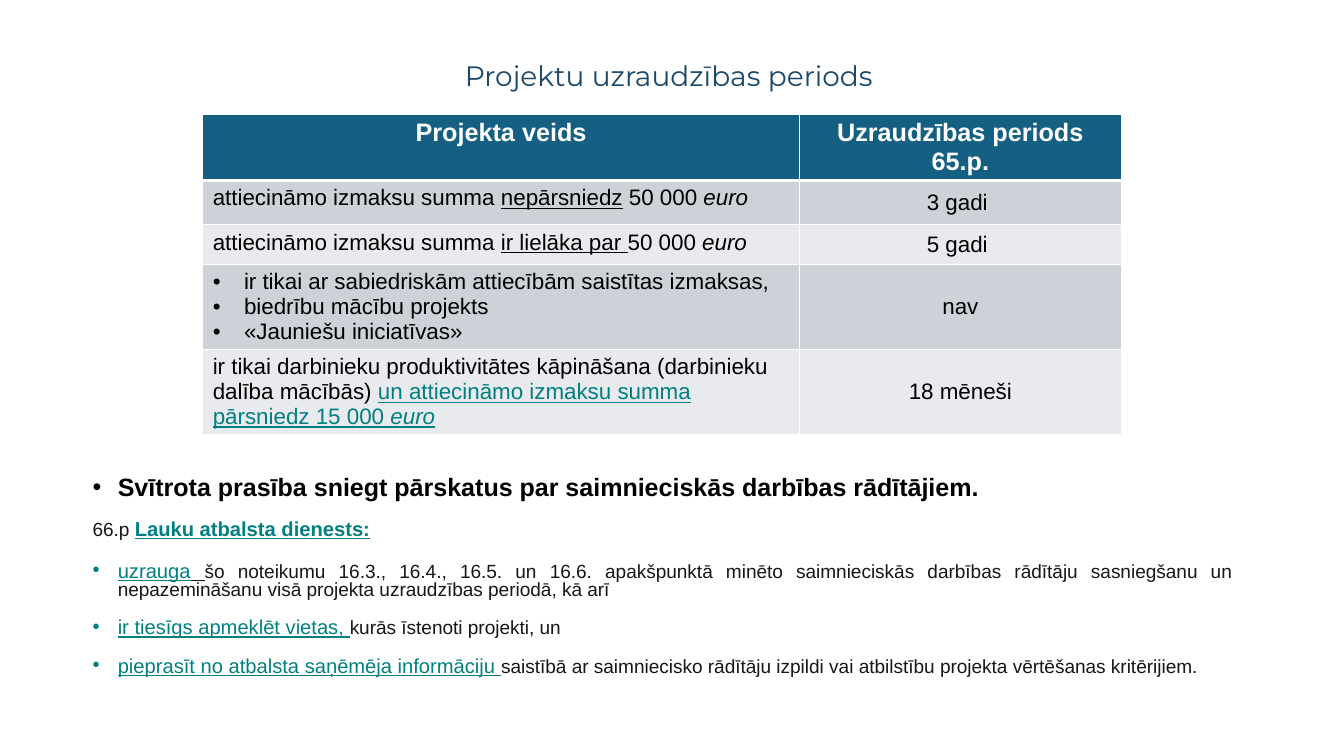
"""Builds a slide on project monitoring periods: a title, a table and notes."""
from dataclasses import dataclass

from lxml import etree
from pptx import Presentation
from pptx.dml.color import RGBColor
from pptx.enum.text import MSO_ANCHOR, PP_ALIGN
from pptx.oxml.ns import qn
from pptx.util import Inches, Pt

LEFT, CENTER, JUSTIFY = PP_ALIGN.LEFT, PP_ALIGN.CENTER, PP_ALIGN.JUSTIFY
TOP, MIDDLE = MSO_ANCHOR.TOP, MSO_ANCHOR.MIDDLE


@dataclass(frozen=True)
class Theme:
    """Colours, fonts and type sizes of the slide."""
    title_font: str = "Montserrat"
    text_font: str = "Arial"
    title: str = "19486A"
    header: str = "156082"
    bands: tuple = ("E8EAED", "CCD2D8")
    white: str = "FFFFFF"
    black: str = "000000"
    ink: str = "171717"
    teal: str = "008080"
    title_size: float = 20
    header_size: float = 18
    cell_size: float = 16
    lead_size: float = 17.9
    wide_size: float = 15.3
    accent_size: float = 14.4
    note_size: float = 13.6


THEME = Theme()
UNDERLINE = {"underline": True}
ITALIC = {"italic": True}
TEAL_LINK = {"underline": True, "color": THEME.teal}
NOTE_LINK = {**TEAL_LINK, "size": THEME.accent_size}


def style_font(font, size=None, color=None, name=None, **flags):
    """Sets the given properties of a font."""
    if size:
        font.size = Pt(size)
    if color:
        font.color.rgb = RGBColor.from_string(color)
    if name:
        font.name = name
    for flag, value in flags.items():
        setattr(font, flag, value)


def write_paragraph(paragraph, runs, alignment, bullet_indent=0, **font):
    """Writes styled runs, with a hanging bullet if an indent in inches is given."""
    paragraph.alignment = alignment
    style_font(paragraph.font, **font)
    if bullet_indent:
        properties = paragraph._p.get_or_add_pPr()
        properties.set("marL", str(Inches(bullet_indent)))
        properties.set("indent", str(-Inches(bullet_indent)))
        bullet_font = etree.Element(qn("a:buFont"), typeface="Arial")
        bullet = etree.Element(qn("a:buChar"), char="•")
        properties.insert(0, bullet_font)
        bullet_font.addnext(bullet)
    for text, style in runs:
        run = paragraph.add_run()
        run.text = text
        style_font(run.font, **style)


presentation = Presentation()
presentation.slide_width, presentation.slide_height = Inches(13.33), Inches(7.5)
column, row = presentation.slide_width / 100, presentation.slide_height / 100
slide = presentation.slides.add_slide(presentation.slide_layouts[5])

title = slide.shapes.title
title.left, title.top = int(6.9 * column), int(5.33 * row)
title.width, title.height = int(85.74 * column), int(9.73 * row)
title.text_frame.vertical_anchor = MIDDLE
title_paragraph = title.text_frame.paragraphs[0]
title_paragraph.line_spacing = 0.9
write_paragraph(title_paragraph, [("Projektu uzraudzības periods", {})], CENTER,
                size=THEME.title_size, color=THEME.title, name=THEME.title_font)

HEADERS = ["Projekta veids", "Uzraudzības periods 65.p."]
PERIODS = [
    ([[("attiecināmo izmaksu summa ", {}), ("nepārsniedz", UNDERLINE),
       (" 50 000 ", {}), ("euro", ITALIC)]], "3 gadi "),
    ([[("attiecināmo izmaksu summa ", {}), ("ir lielāka par ", UNDERLINE),
       ("50 000 ", {}), ("euro", ITALIC)]], "5 gadi "),
    ([[("ir tikai ar sabiedriskām attiecībām saistītas izmaksas,", {})],
      [("biedrību mācību projekts", {})],
      [("«Jauniešu iniciatīvas»", {})]], "nav"),
    ([[("ir tikai darbinieku produktivitātes kāpināšana (darbinieku dalība mācībās) ", {}),
       ("un attiecināmo izmaksu summa pārsniedz 15 000 ", TEAL_LINK),
       ("euro", {**TEAL_LINK, **ITALIC})]], "18 mēneši"),
]
COLUMN_WIDTHS = [44.41, 23.93]
ROW_HEIGHTS = [8.8, 5.87, 5.2, 11.3, 11.3]

table = slide.shapes.add_table(
    len(ROW_HEIGHTS), len(COLUMN_WIDTHS), int(15.08 * column), int(15.07 * row),
    int(sum(COLUMN_WIDTHS) * column), int(sum(ROW_HEIGHTS) * row)).table
for table_column, width in zip(table.columns, COLUMN_WIDTHS):
    table_column.width = int(width * column)
for table_row, height in zip(table.rows, ROW_HEIGHTS):
    table_row.height = int(height * row)

cell_rows = [[[[(header, {})]] for header in HEADERS]]
cell_rows += [[kind, [[(period, {})]]] for kind, period in PERIODS]
for row_index, cell_row in enumerate(cell_rows):
    is_header = row_index == 0
    for column_index, paragraphs in enumerate(cell_row):
        cell = table.cell(row_index, column_index)
        properties = cell._tc.get_or_add_tcPr()
        for side in "LRTB":
            heavy = (is_header and side == "B") or (row_index == 1 and side == "T")
            border = etree.SubElement(properties, qn(f"a:ln{side}"), w=str(Pt(3 if heavy else 1)))
            border_fill = etree.SubElement(border, qn("a:solidFill"))
            etree.SubElement(border_fill, qn("a:srgbClr"), val=THEME.white)
        cell.fill.solid()
        cell.fill.fore_color.rgb = RGBColor.from_string(
            THEME.header if is_header else THEME.bands[row_index % 2])
        is_period = column_index == 1 and not is_header
        cell.vertical_anchor = MIDDLE if is_period else TOP
        for index, runs in enumerate(paragraphs):
            frame = cell.text_frame
            paragraph = frame.add_paragraph() if index else frame.paragraphs[0]
            write_paragraph(
                paragraph, runs, CENTER if is_header or is_period else LEFT,
                bullet_indent=0.31 if len(paragraphs) > 1 else 0,
                size=THEME.header_size if is_header else THEME.cell_size,
                color=THEME.white if is_header else THEME.black,
                name=THEME.text_font, bold=is_header)

NOTES = [
    (0, 0.25, [("Svītrota prasība sniegt pārskatus par saimnieciskās darbības rādītājiem.",
                {"size": THEME.lead_size, "color": THEME.black, "bold": True})]),
    (14, 0, [("66.p ", {}), ("Lauku atbalsta dienests:", {**NOTE_LINK, "bold": True})]),
    (15, 0.25, [("uzrauga", NOTE_LINK), (" ", {**UNDERLINE, "size": THEME.wide_size}),
                ("šo noteikumu 16.3., 16.4., 16.5. un 16.6. apakšpunktā minēto "
                 "saimnieciskās darbības rādītāju sasniegšanu un "
                 "nepazemināšanu visā projekta uzraudzības periodā, kā arī", {})]),
    (13.5, 0.25, [("ir tiesīgs apmeklēt vietas, ", NOTE_LINK),
                  ("kurās īstenoti projekti, un ", {})]),
    (13.5, 0.25, [("pieprasīt no atbalsta saņēmēja informāciju ", NOTE_LINK),
                  ("saistībā ar saimniecisko rādītāju izpildi vai atbilstību "
                   "projekta vērtēšanas kritērijiem.", {})]),
]

notes = slide.shapes.add_textbox(int(6.15 * column), int(59.47 * row),
                                 int(86.27 * column), int(30.4 * row)).text_frame
notes.word_wrap = True
notes.margin_top = int(3.7 * row)
for index, (space_before, bullet_indent, runs) in enumerate(NOTES):
    paragraph = notes.add_paragraph() if index else notes.paragraphs[0]
    paragraph.line_spacing = 0.8
    paragraph.space_before = Pt(space_before)
    write_paragraph(paragraph, runs, JUSTIFY, bullet_indent, size=THEME.note_size,
                    color=THEME.ink, name=THEME.text_font)
    properties = paragraph._p.get_or_add_pPr()
    for bullet_part in properties.findall(qn("a:buFont")) + properties.findall(qn("a:buChar")):
        properties.find(qn("a:defRPr")).addprevious(bullet_part)

presentation.save("out.pptx")
